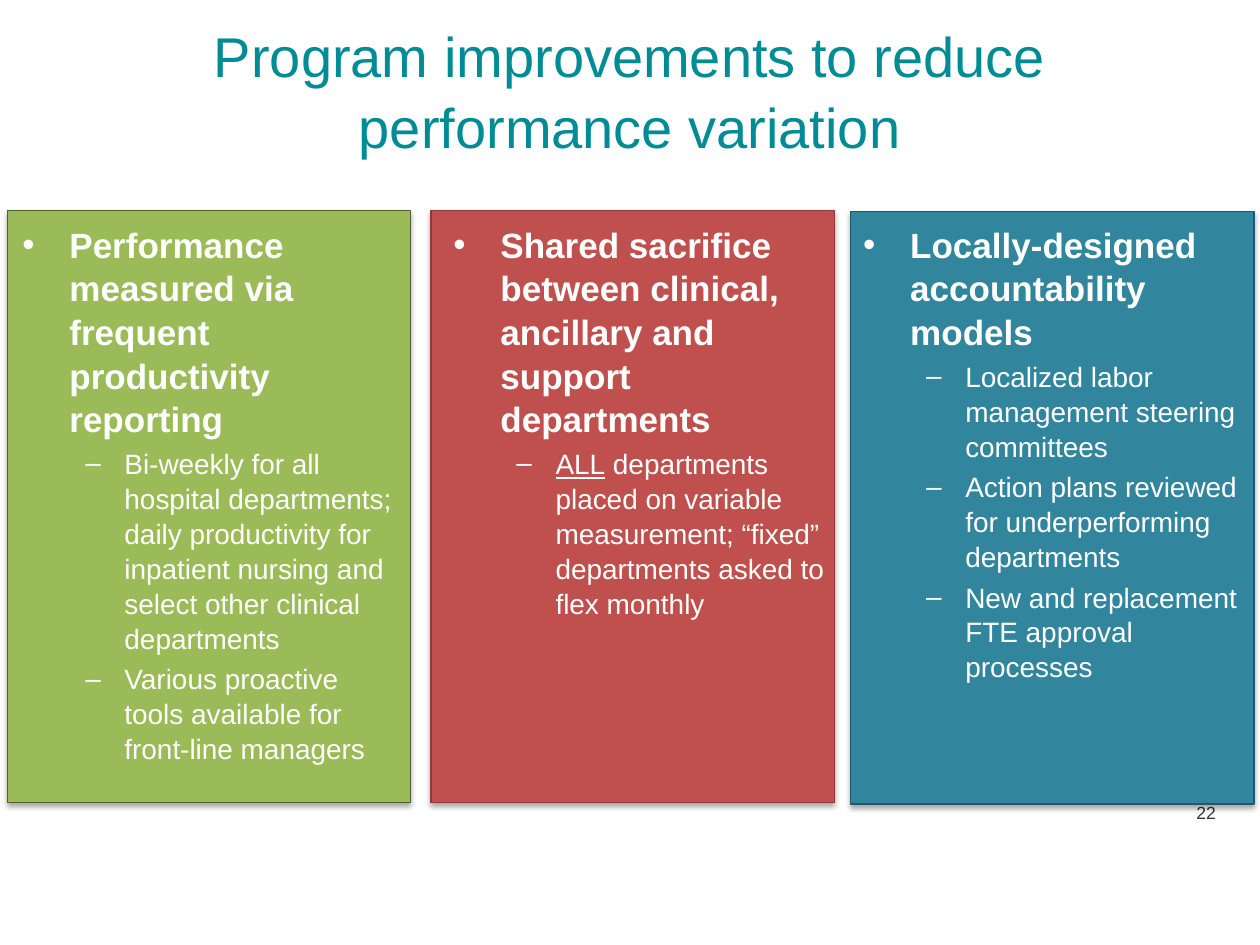
import lxml.etree
import pptx
import pptx.dml.color
import pptx.enum.shapes
import pptx.enum.text
import pptx.oxml.ns
import pptx.util

Cm = pptx.util.Cm
Pt = pptx.util.Pt
ALIGN = pptx.enum.text.PP_ALIGN
ANCHOR = pptx.enum.text.MSO_ANCHOR

FONT = "Arial"
COLORS = {
    "title": "008C95", "text": "FFFFFF", "number": "333333", "shadow": "000000",
    "green": "9BBB59", "green line": "4F6228",
    "red": "C0504D", "red line": "953735",
    "teal": "31859C", "teal line": "215968",
}

TITLE = "Program improvements to reduce performance variation"
PAGE_NUMBER = "22"

# Panels and text boxes are (left, top, width, height) in cm.
# "underlined" is the opening word of the first point that carries a line.
COLUMNS = [
    {"color": "green", "panel": (0.15, 4.24, 8.13, 11.94),
     "text": (0.2, 4.34, 8.08, 12.9),
     "heading": "Performance measured via frequent productivity reporting",
     "underlined": "",
     "points": ["Bi-weekly for all hospital departments; daily productivity for "
                "inpatient nursing and select other clinical departments",
                "Various proactive tools available for front-line managers"]},
    {"color": "red", "panel": (8.69, 4.24, 8.13, 11.94),
     "text": (8.89, 4.34, 8.05, 7.24),
     "heading": "Shared sacrifice between clinical, ancillary and support departments",
     "underlined": "ALL",
     "points": ["ALL departments placed on variable measurement; “fixed” "
                "departments asked to flex monthly"]},
    {"color": "teal", "panel": (17.15, 4.27, 8.13, 11.94),
     "text": (17.15, 4.34, 8.26, 8.86),
     "heading": "Locally-designed accountability models",
     "underlined": "",
     "points": ["Localized labor management steering committees",
                "Action plans reviewed for underperforming departments",
                "New and replacement FTE approval processes"]},
]

# Bullet sign, left margin and hanging indent in cm, by level
LEVELS = [("•", 0.95, 0.95), ("–", 2.06, 0.79)]


def rgb(name):
    return pptx.dml.color.RGBColor.from_string(COLORS[name])


def add_xml(parent, tag, **attributes):
    child = lxml.etree.SubElement(parent, pptx.oxml.ns.qn(tag))
    for key, value in attributes.items():
        child.set(key, str(value))
    return child


def add_box(page, place, anchor=ANCHOR.TOP):
    box = page.shapes.add_textbox(*map(Cm, place))
    box.text_frame.word_wrap = True
    box.text_frame.vertical_anchor = anchor
    return box


def write(box, text, size, color, bold=False, align=ALIGN.LEFT, level=None,
          before=0, spacing=None, underlined=""):
    """Add one paragraph to the box, filling its empty first one if there is one."""
    frame = box.text_frame
    para = frame.add_paragraph() if frame.text else frame.paragraphs[0]
    para.alignment = align
    para.space_before = Pt(before)
    if spacing:
        para.line_spacing = spacing
    if level is not None:
        sign, margin, hanging = LEVELS[level]
        para.level = level
        properties = para._p.get_or_add_pPr()
        properties.set("marL", str(Cm(margin)))
        properties.set("indent", str(-Cm(hanging)))
        add_xml(properties, "a:buFont", typeface=FONT)
        add_xml(properties, "a:buChar", char=sign)
    for part in filter(None, (underlined, text[len(underlined):])):
        span = para.add_run()
        span.text = part
        span.font.name = FONT
        span.font.size = Pt(size)
        span.font.bold = bold
        span.font.underline = part == underlined
        span.font.color.rgb = rgb(color)


def add_panel(page, place, color):
    panel = page.shapes.add_shape(
        pptx.enum.shapes.MSO_SHAPE.RECTANGLE, *map(Cm, place))
    panel.fill.solid()
    panel.fill.fore_color.rgb = rgb(color)
    panel.line.color.rgb = rgb(color + " line")
    panel.line.width = Pt(0.75)
    panel.shadow.inherit = False
    effects = panel._element.spPr.find(pptx.oxml.ns.qn("a:effectLst"))
    shadow = add_xml(effects, "a:outerShdw", blurRad=Pt(3.1), dist=Pt(1.8),
                     dir=90 * 60000, rotWithShape=0)
    shade = add_xml(shadow, "a:srgbClr", val=COLORS["shadow"])
    add_xml(shade, "a:alpha", val=35000)


def main():
    deck = pptx.Presentation()
    deck.slide_width, deck.slide_height = Cm(25.4), Cm(19.05)
    page = deck.slides.add_slide(deck.slide_layouts[6])

    number = add_box(page, (21.79, 16.05, 2.97, 0.58))
    write(number, PAGE_NUMBER, 10, "number", align=ALIGN.RIGHT)

    for column in reversed(COLUMNS):
        add_panel(page, column["panel"], column["color"])

    title = add_box(page, (1.27, 0.84, 22.86, 1.9), ANCHOR.MIDDLE)
    write(title, TITLE, 32, "title", align=ALIGN.CENTER, spacing=1.05)

    for column in COLUMNS:
        box = add_box(page, column["text"])
        write(box, column["heading"], 20, "text", bold=True, level=0, spacing=1.04)
        for index, point in enumerate(column["points"]):
            write(box, point, 16, "text", level=1, before=3.2, spacing=1.04,
                  underlined="" if index else column["underlined"])

    deck.save("out.pptx")


if __name__ == "__main__":
    main()
